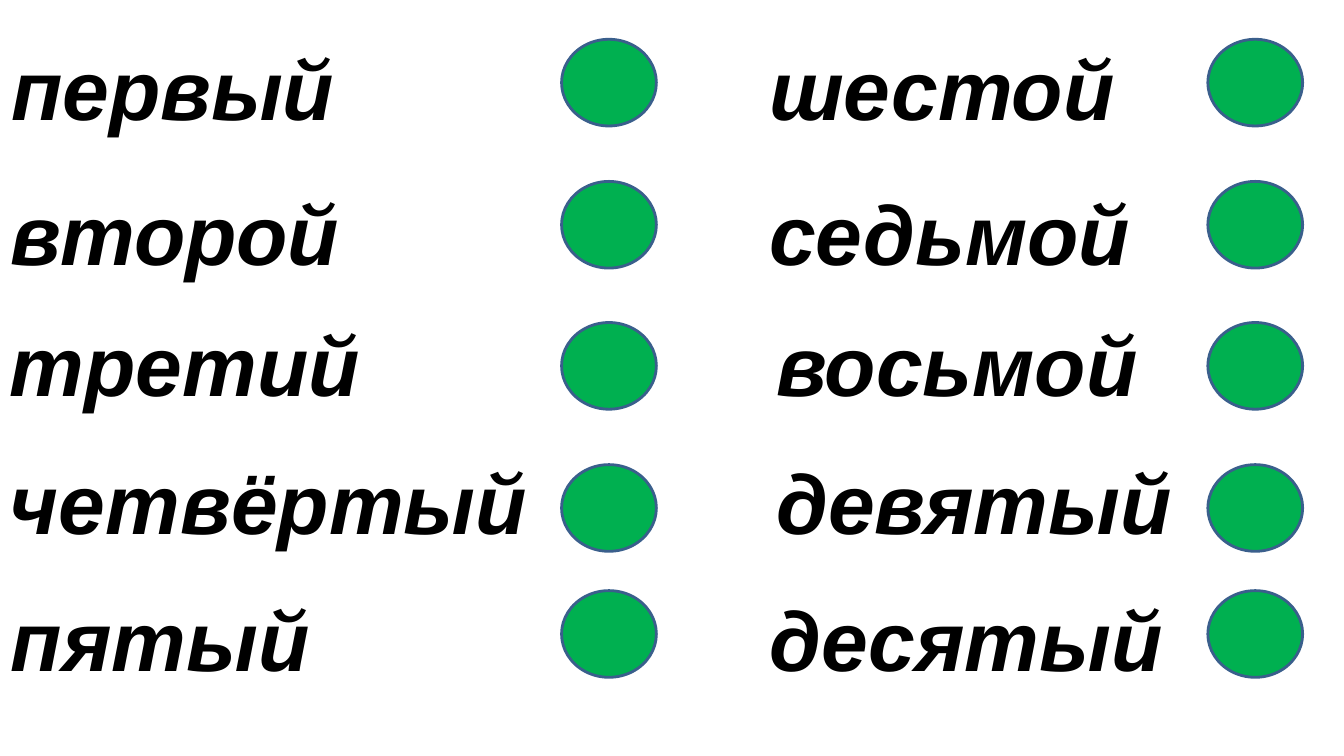
import pptx
import pptx.dml.color
import pptx.enum.shapes
import pptx.enum.text
import pptx.util

SLIDE_WIDTH, SLIDE_HEIGHT = 13.33, 7.5
TITLE_ONLY = 5

# Top and height of the word, then top of its circle
ROWS = [
    (0.31, 1.02, 0.39),
    (1.48, 1.56, 1.8),
    (2.81, 1.48, 3.2),
    (4.22, 1.41, 4.61),
    (5.7, 1.17, 5.86),
]
# Left of the circles, then each word with its left and width
COLUMNS = [
    (5.57, [("первый", 0.01, 3.61), ("второй", 0.01, 3.85), ("третий", 0, 4.01),
            ("четвёртый", 0, 5.34), ("пятый", 0.01, 3.54)]),
    (11.98, [("шестой", 7.53, 3.83), ("седьмой", 7.53, 3.98), ("восьмой", 7.6, 3.91),
             ("девятый", 7.6, 4.22), ("десятый", 7.53, 4.22)]),
]
CIRCLE_WIDTH, CIRCLE_HEIGHT = 0.94, 0.86


def color(hex_code):
    return pptx.dml.color.RGBColor.from_string(hex_code)


def inches(*lengths):
    return [pptx.util.Inches(length) for length in lengths]


def write_ordinal(holder, word):
    frame = holder.text_frame
    frame.word_wrap = True
    frame.auto_size = pptx.enum.text.MSO_AUTO_SIZE.NONE
    frame.vertical_anchor = pptx.enum.text.MSO_ANCHOR.MIDDLE
    frame.margin_top = pptx.util.Inches(0.14)
    paragraph = frame.paragraphs[0]
    paragraph.alignment = pptx.enum.text.PP_ALIGN.LEFT
    run = paragraph.add_run()
    run.text = word
    run.font.name = "Arial"
    run.font.size = pptx.util.Pt(60)
    run.font.bold = run.font.italic = True
    run.font.color.rgb = color("000000")


def place_title(slide, word, left, top, width, height):
    title = slide.shapes.title
    title.left, title.top, title.width, title.height = inches(left, top, width, height)
    write_ordinal(title, word)


def add_ordinal(slide, word, left, top, width, height):
    write_ordinal(slide.shapes.add_textbox(*inches(left, top, width, height)), word)


def add_circle(slide, left, top):
    circle = slide.shapes.add_shape(
        pptx.enum.shapes.MSO_SHAPE.OVAL, *inches(left, top, CIRCLE_WIDTH, CIRCLE_HEIGHT))
    circle.shadow.inherit = False
    circle.fill.solid()
    circle.fill.fore_color.rgb = color("00B050")
    circle.line.color.rgb = color("3A5F8C")
    circle.line.width = pptx.util.Pt(2)


def main():
    deck = pptx.Presentation()
    deck.slide_width, deck.slide_height = inches(SLIDE_WIDTH, SLIDE_HEIGHT)
    slide = deck.slides.add_slide(deck.slide_layouts[TITLE_ONLY])
    for column, (circle_left, ordinals) in enumerate(COLUMNS):
        for row, (word, left, width) in enumerate(ordinals):
            top, height, circle_top = ROWS[row]
            place_word = place_title if column == row == 0 else add_ordinal
            place_word(slide, word, left, top, width, height)
            add_circle(slide, circle_left, circle_top)
    deck.save("out.pptx")


if __name__ == "__main__":
    main()
